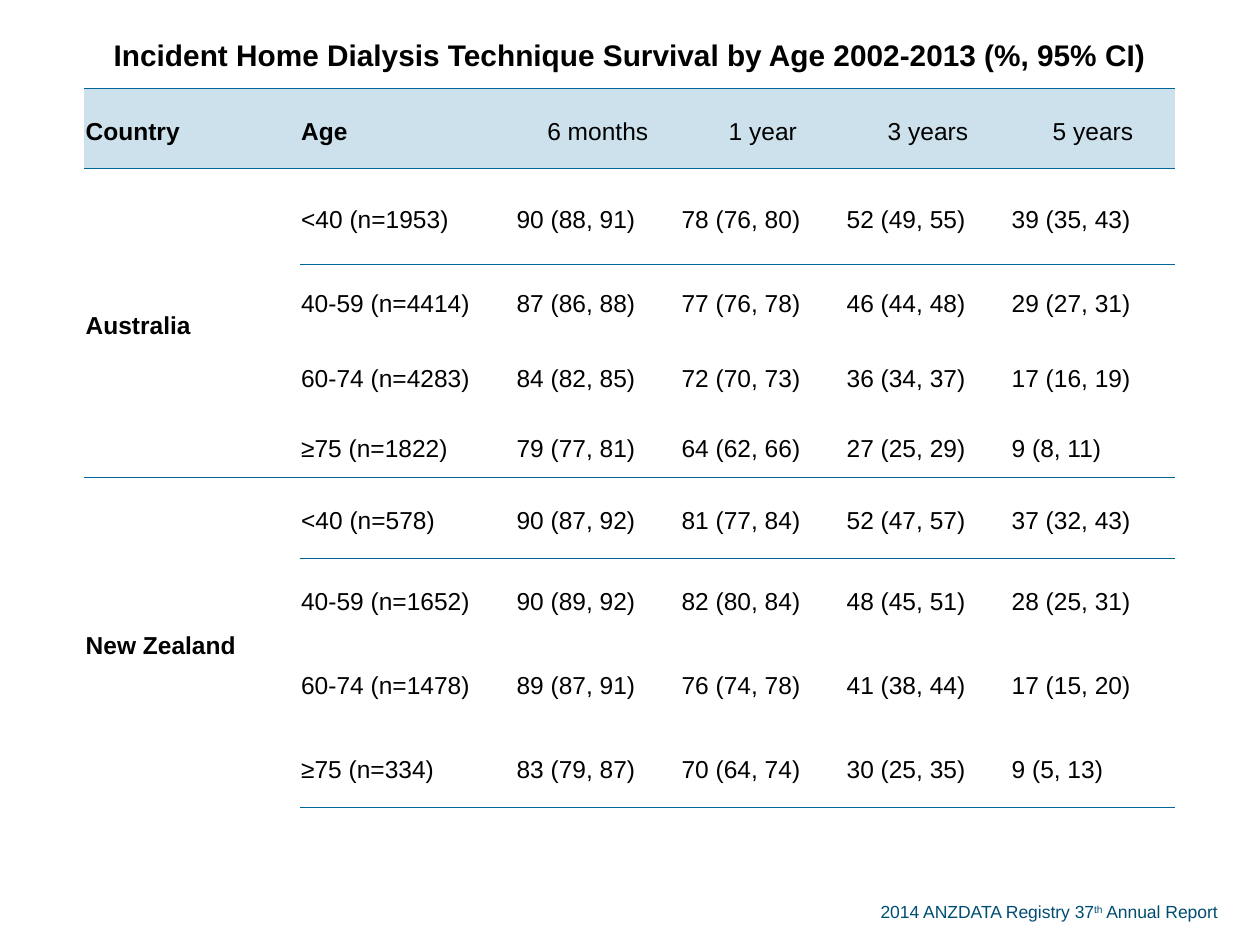
from dataclasses import dataclass

from lxml.etree import SubElement
from pptx import Presentation
from pptx.dml.color import RGBColor
from pptx.enum.text import MSO_ANCHOR, PP_ALIGN
from pptx.oxml import parse_xml
from pptx.oxml.ns import nsdecls, qn
from pptx.util import Inches, Pt


@dataclass(frozen=True)
class Theme:
    font: str = "Arial"
    ink: str = "000000"
    footer: str = "004D73"
    rule: str = "006699"
    header_fill: str = "CCE1EB"
    title_size: int = 17
    table_size: int = 14
    footer_size: int = 10
    rule_width: float = 0.5


THEME = Theme()
PLAIN_STYLE = "{2D5ABB26-0587-4C30-8999-92F81FD0307C}"

TITLE = "Incident Home Dialysis Technique Survival by Age 2002-2013 (%, 95% CI)"
HEADINGS = ["Country", "Age", "6 months", "1 year", "3 years", "5 years"]
SURVIVAL = {
    "Australia": [
        ["<40 (n=1953)", "90 (88, 91)", "78 (76, 80)", "52 (49, 55)", "39 (35, 43)"],
        ["40-59 (n=4414)", "87 (86, 88)", "77 (76, 78)", "46 (44, 48)", "29 (27, 31)"],
        ["60-74 (n=4283)", "84 (82, 85)", "72 (70, 73)", "36 (34, 37)", "17 (16, 19)"],
        ["≥75 (n=1822)", "79 (77, 81)", "64 (62, 66)", "27 (25, 29)", "9 (8, 11)"],
    ],
    "New Zealand": [
        ["<40 (n=578)", "90 (87, 92)", "81 (77, 84)", "52 (47, 57)", "37 (32, 43)"],
        ["40-59 (n=1652)", "90 (89, 92)", "82 (80, 84)", "48 (45, 51)", "28 (25, 31)"],
        ["60-74 (n=1478)", "89 (87, 91)", "76 (74, 78)", "41 (38, 44)", "17 (15, 20)"],
        ["≥75 (n=334)", "83 (79, 87)", "70 (64, 74)", "30 (25, 35)", "9 (5, 13)"],
    ],
}
COLUMN_WIDTHS = [1.71] * 2 + [1.31] * 4
ROW_HEIGHTS = [0.57, 0.64, 0.76, 0.58, 0.6, 0.51, 0.64, 0.64, 0.7, 0.64]
RULED_ROWS = {0, 1, 5, 9}  # rows with a line below them


def add_text(para, text, *, size=THEME.table_size, color=THEME.ink, bold=False, raised=False):
    span = para.add_run()
    span.text = text
    span.font.name = THEME.font
    span.font.size = Pt(size)
    span.font.bold = bold
    span.font.color.rgb = RGBColor.from_string(color)
    if raised:
        span.font._element.set("baseline", "30000")


def fill_cell(cell, text, *, align=PP_ALIGN.LEFT, **text_format):
    cell.vertical_anchor = MSO_ANCHOR.MIDDLE
    cell.margin_left = cell.margin_right = cell.margin_top = Inches(0.01)
    cell.margin_bottom = 0
    para = cell.text_frame.paragraphs[0]
    para.alignment = align
    para.line_spacing = 1.19
    para.space_after = Pt(14)
    add_text(para, text, **text_format)


def style_cell(cell, row):
    if row == 1:
        cell.fill.solid()
        cell.fill.fore_color.rgb = RGBColor.from_string(THEME.header_fill)
    else:
        cell.fill.background()
    sides = [("lnT", row - 1 in RULED_ROWS), ("lnB", row in RULED_ROWS)]
    drawn = [side for side, ruled in sides if ruled]
    # Borders must come before the fill
    for position, side in enumerate(drawn):
        line = parse_xml(
            f'<a:{side} {nsdecls("a")} w="{Pt(THEME.rule_width)}"><a:solidFill>'
            f'<a:srgbClr val="{THEME.rule}"/></a:solidFill></a:{side}>'
        )
        cell._tc.get_or_add_tcPr().insert(position, line)


def add_survival_table(page):
    frame = page.shapes.add_table(
        len(ROW_HEIGHTS), len(COLUMN_WIDTHS), Inches(0.67), Inches(0.13),
        Inches(sum(COLUMN_WIDTHS)), Inches(sum(ROW_HEIGHTS)),
    )
    table = frame.table
    table.first_row = table.horz_banding = False
    properties = table._tbl.tblPr
    style = properties.find(qn("a:tableStyleId"))
    if style is None:
        style = SubElement(properties, qn("a:tableStyleId"))
    style.text = PLAIN_STYLE

    for column, width in zip(table.columns, COLUMN_WIDTHS):
        column.width = Inches(width)
    for index, (row, height) in enumerate(zip(table.rows, ROW_HEIGHTS)):
        row.height = Inches(height)
        for cell in row.cells:
            style_cell(cell, index)

    # Title row across all columns
    table.cell(0, 0).merge(table.cell(0, len(HEADINGS) - 1))
    fill_cell(table.cell(0, 0), TITLE, align=PP_ALIGN.CENTER, size=THEME.title_size, bold=True)

    # Column headings
    for column, heading in enumerate(HEADINGS):
        is_label = column < 2
        fill_cell(table.cell(1, column), heading, bold=is_label,
                  align=PP_ALIGN.LEFT if is_label else PP_ALIGN.CENTER)

    # One block of age groups per country
    top = 2
    for country, groups in SURVIVAL.items():
        table.cell(top, 0).merge(table.cell(top + len(groups) - 1, 0))
        fill_cell(table.cell(top, 0), country, bold=True)
        for row, group in enumerate(groups, start=top):
            for column, value in enumerate(group, start=1):
                fill_cell(table.cell(row, column), value)
        top += len(groups)


def add_footer(page):
    box = page.shapes.add_textbox(Inches(6.89), Inches(7.1), Inches(2.99), Inches(0.27))
    box.text_frame.word_wrap = True
    para = box.text_frame.paragraphs[0]
    for text, raised in [("2014 ANZDATA Registry 37", False), ("th", True), (" Annual Report", False)]:
        add_text(para, text, size=THEME.footer_size, color=THEME.footer, raised=raised)


def main():
    deck = Presentation()
    deck.slide_width, deck.slide_height = Inches(10), Inches(7.5)
    # The title is a table row, so the blank layout fits
    page = deck.slides.add_slide(deck.slide_layouts[6])
    add_footer(page)
    add_survival_table(page)
    deck.save("out.pptx")


if __name__ == "__main__":
    main()
